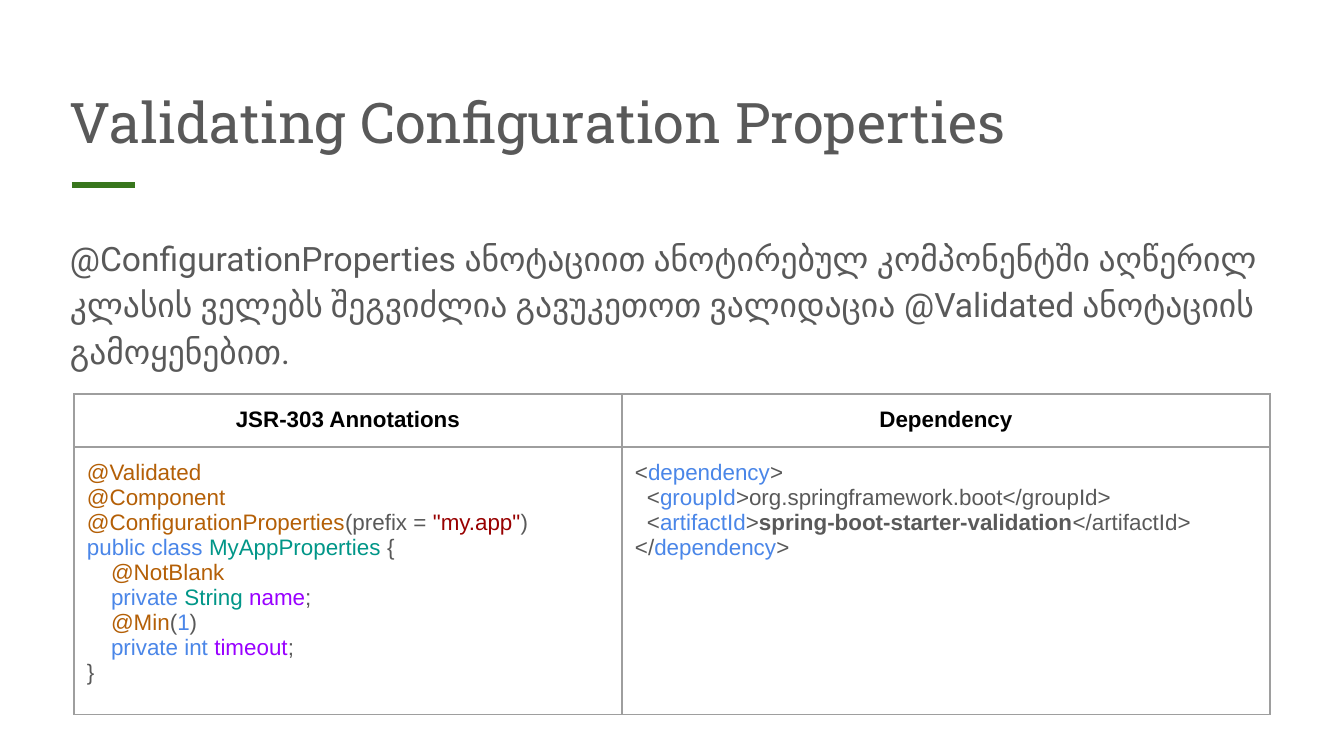
from lxml.etree import SubElement
from pptx import Presentation
from pptx.dml.color import RGBColor
from pptx.enum.shapes import MSO_CONNECTOR
from pptx.enum.text import MSO_ANCHOR, PP_ALIGN
from pptx.oxml.ns import qn
from pptx.util import Pt

EMU_PER_PX = 914400 / 134.4
INSET = 13
INDENT_STEP = 12

GREY, BLACK, RULE, BORDER = "595959", "000000", "38761D", "9E9E9E"
ANNOTATION, KEYWORD, TYPE = "B45F06", "4A86E8", "009688"
FIELD, LITERAL = "9900FF", "980000"

TITLE = "Validating Configuration Properties"
INTRO = (
    "@ConfigurationProperties ანოტაციით ანოტირებულ კომპონენტში აღწერილ "
    "კლასის ველებს შეგვიძლია გავუკეთოთ ვალიდაცია @Validated ანოტაციის "
    "გამოყენებით."
)
TITLE_FONT = {"name": "Roboto Slab", "size": Pt(30)}
INTRO_FONT = {"name": "Roboto", "size": Pt(18)}
CELL_FONT = {"name": "Arial", "size": Pt(12), "bold": False}
BOLD_FONT = {**CELL_FONT, "bold": True}

HEADERS = ["JSR-303 Annotations", "Dependency"]
JAVA_LINES = [
    (0, [("@Validated", ANNOTATION)]),
    (0, [("@Component", ANNOTATION)]),
    (0, [("@ConfigurationProperties", ANNOTATION), ("(prefix = ", GREY),
         ('"my.app"', LITERAL), (")", GREY)]),
    (0, [("public class ", KEYWORD), ("MyAppProperties ", TYPE), ("{", GREY)]),
    (2, [("@NotBlank", ANNOTATION)]),
    (2, [("private ", KEYWORD), ("String ", TYPE), ("name", FIELD), (";", GREY)]),
    (2, [("@Min", ANNOTATION), ("(", GREY), ("1", KEYWORD), (")", GREY)]),
    (2, [("private int ", KEYWORD), ("timeout", FIELD), (";", GREY)]),
    (0, [("}", GREY)]),
]
XML_LINES = [
    (0, [("<", GREY), ("dependency", KEYWORD), (">", GREY)]),
    (1, [("<", GREY), ("groupId", KEYWORD),
         (">org.springframework.boot</groupId>", GREY)]),
    (1, [("<", GREY), ("artifactId", KEYWORD), (">", GREY),
         ("spring-boot-starter-validation", GREY, BOLD_FONT),
         ("</artifactId>", GREY)]),
    (0, [("</", GREY), ("dependency", KEYWORD), (">", GREY)]),
]


def px(length):
    """Turn px into EMU."""
    return round(length * EMU_PER_PX)


def rgb(value):
    """Turn a hex string into a colour."""
    return RGBColor.from_string(value)


def apply(target, values):
    """Set each named attribute on the target."""
    for name, value in values.items():
        setattr(target, name, value)


def add_run(paragraph, text, color, font):
    """Append a formatted run to a paragraph."""
    run = paragraph.add_run()
    run.text = text
    apply(run.font, font)
    run.font.color.rgb = rgb(color)


def add_text(slide, box, text, font, anchor, spacing):
    """Place a wrapped text box with a single paragraph."""
    frame = slide.shapes.add_textbox(*map(px, box)).text_frame
    margins = ("margin_left", "margin_top", "margin_right", "margin_bottom")
    apply(frame, {"word_wrap": True, "vertical_anchor": anchor,
                  **dict.fromkeys(margins, px(INSET))})
    frame.paragraphs[0].line_spacing = spacing
    add_run(frame.paragraphs[0], text, GREY, font)


def add_rule(slide, left, right, y):
    """Draw the short horizontal rule under the title."""
    rule = slide.shapes.add_connector(
        MSO_CONNECTOR.STRAIGHT, px(left), px(y), px(right), px(y))
    rule.line.width = Pt(3)
    rule.line.color.rgb = rgb(RULE)
    SubElement(rule._element.spPr, qn("a:effectLst"))


def format_cell(cell):
    """Give a cell its margins, thin borders and no fill."""
    margins = ("margin_left", "margin_top", "margin_right", "margin_bottom")
    apply(cell, dict.fromkeys(margins, px(INSET)))
    properties = cell._tc.get_or_add_tcPr()
    for side in ("lnL", "lnR", "lnT", "lnB"):
        border = SubElement(properties, qn(f"a:{side}"), w=str(Pt(0.75)))
        fill = SubElement(border, qn("a:solidFill"))
        SubElement(fill, qn("a:srgbClr"), val=BORDER)
    cell.fill.background()


def write_code(cell, lines):
    """Write indented, coloured code lines into a cell."""
    frame = cell.text_frame
    for number, (depth, tokens) in enumerate(lines):
        paragraph = frame.add_paragraph() if number else frame.paragraphs[0]
        if depth:
            properties = paragraph._p.get_or_add_pPr()
            properties.set("marL", str(px(depth * INDENT_STEP)))
            properties.set("indent", "0")
        for text, color, *font in tokens:
            add_run(paragraph, text, color, font[0] if font else CELL_FONT)


def add_code_table(slide, left, top, widths, heights):
    """Build the table of headed code samples."""
    table = slide.shapes.add_table(
        len(heights), len(widths), px(left), px(top),
        px(sum(widths)), px(sum(heights))).table
    apply(table, {"first_row": False, "horz_banding": False})
    for column, width in zip(table.columns, widths):
        column.width = px(width)
    for row, height in zip(table.rows, heights):
        row.height = px(height)
    for cell in table.iter_cells():
        format_cell(cell)
    for column, (header, lines) in enumerate(zip(HEADERS, (JAVA_LINES, XML_LINES))):
        heading = table.cell(0, column).text_frame.paragraphs[0]
        heading.alignment = PP_ALIGN.CENTER
        add_run(heading, header, BLACK, BOLD_FONT)
        write_code(table.cell(1, column), lines)


def main():
    """Build and save the slide."""
    deck = Presentation()
    apply(deck, {"slide_width": px(1344), "slide_height": px(756)})
    slide = deck.slides.add_slide(deck.slide_layouts[6])
    add_rule(slide, 72, 135, 185)
    add_text(slide, (57, 67, 1230, 101), TITLE, TITLE_FONT, MSO_ANCHOR.BOTTOM, 1.0)
    add_text(slide, (57, 219, 1230, 453), INTRO, INTRO_FONT, MSO_ANCHOR.TOP, 1.15)
    add_code_table(slide, 74, 394, (548, 648), (53, 266))
    deck.save("out.pptx")


if __name__ == "__main__":
    main()
